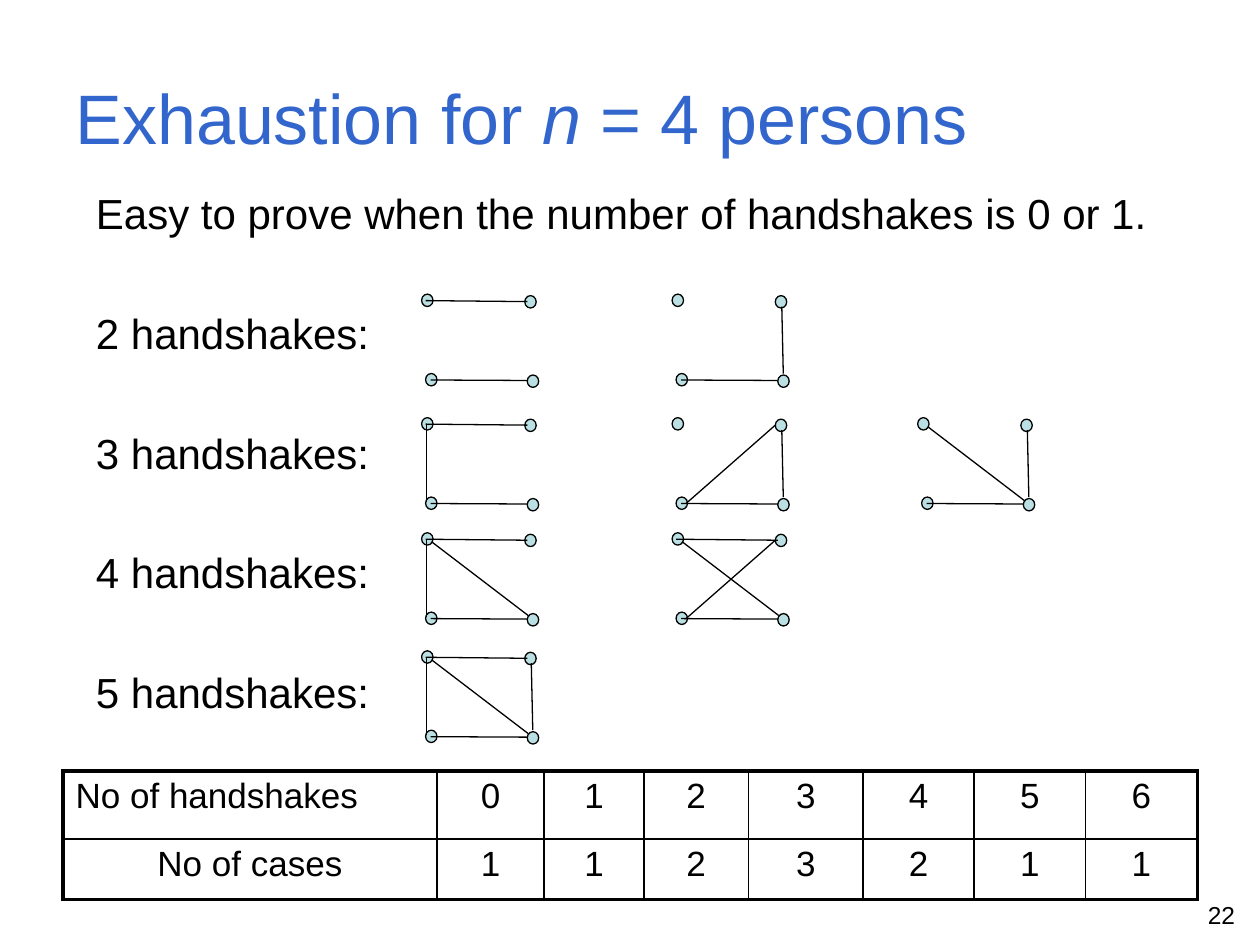
from dataclasses import dataclass

from lxml import etree
from pptx import Presentation
from pptx.dml.color import RGBColor
from pptx.enum.shapes import MSO_CONNECTOR, MSO_SHAPE
from pptx.enum.text import MSO_ANCHOR, MSO_AUTO_SIZE, PP_ALIGN
from pptx.oxml.ns import qn
from pptx.util import Cm, Pt

LEFT, CENTER, RIGHT = PP_ALIGN.LEFT, PP_ALIGN.CENTER, PP_ALIGN.RIGHT
TOP, MIDDLE = MSO_ANCHOR.TOP, MSO_ANCHOR.MIDDLE
NO_AUTOFIT = MSO_AUTO_SIZE.NONE
STRAIGHT = MSO_CONNECTOR.STRAIGHT
ELLIPSE = MSO_SHAPE.OVAL


@dataclass(frozen=True)
class Theme:
    font: str = "Arial"
    heading: str = "3366CC"
    ink: str = "000000"
    person: str = "BBE0E3"
    title_size: float = 40
    body_size: float = 24
    table_size: float = 20
    number_size: float = 14
    thin: float = 0.75
    inner: float = 1
    outer: float = 2.25


PERSON_SIZE = (0.23, 0.25)
PERSONS = [(0, 0), (0.08, 1.6), (2.13, 1.63), (2.08, 0.03)]
HANDSHAKES = {
    "top": ((0.08, 0.13), (2.13, 0.15)),
    "bottom": ((0.18, 1.73), (2.13, 1.74)),
    "left": ((0.1, 0.15), (0.1, 1.7)),
    "right": ((2.21, 0.25), (2.24, 1.6)),
    "rising": ((0.28, 1.73), (2.08, 0.15)),
    "falling": ((0.2, 0.18), (2.15, 1.67)),
}
GRAPH_LEFTS = [8.5, 13.55, 18.5]
GRAPH_ROWS = [
    (5.93, ["top bottom", "bottom right"]),
    (8.42, ["top bottom left", "bottom right rising", "bottom right falling"]),
    (10.74, ["top bottom left falling", "top bottom rising falling"]),
    (13.12, ["top bottom left right falling"]),
]
CASES = [
    ["No of handshakes", "0", "1", "2", "3", "4", "5", "6"],
    ["No of cases", "1", "1", "2", "3", "2", "1", "1"],
]
COLUMN_WIDTHS = [7.54, 2.16, 2.01, 2.11, 2.31, 2.24, 2.24, 2.26]
ROW_HEIGHTS = [1.37, 1.22]


class SlideBuilder:
    def __init__(self, slide, theme):
        self.slide = slide
        self.theme = theme

    def place(self, shape, left, top, width, height):
        shape.left, shape.top = Cm(left), Cm(top)
        shape.width, shape.height = Cm(width), Cm(height)

    def run(self, paragraph, text, size, color=None, italic=False):
        run = paragraph.add_run()
        run.text = text
        run.font.name = self.theme.font
        run.font.size = Pt(size)
        run.font.italic = italic
        run.font.color.rgb = RGBColor.from_string(color or self.theme.ink)

    def title(self, parts, box):
        title = self.slide.shapes.title
        self.place(title, *box)
        frame = title.text_frame
        frame.auto_size = NO_AUTOFIT
        frame.vertical_anchor = MIDDLE
        paragraph = frame.paragraphs[0]
        paragraph.alignment = LEFT
        for text, italic in parts:
            self.run(paragraph, text, self.theme.title_size, self.theme.heading, italic)

    def body(self, lines, box, first_gap, gap):
        body = self.slide.placeholders[1]
        self.place(body, *box)
        frame = body.text_frame
        frame.auto_size = NO_AUTOFIT
        frame.vertical_anchor = TOP
        for index, line in enumerate(lines):
            paragraph = frame.add_paragraph() if index else frame.paragraphs[0]
            paragraph.space_before = Pt(gap if index else first_gap)
            properties = paragraph._p.get_or_add_pPr()
            properties.set("marL", str(Cm(0.95)))
            properties.set("indent", str(Cm(-0.95)))
            etree.SubElement(properties, qn("a:buNone"))
            self.run(paragraph, line, self.theme.body_size)

    def page_number(self, number, box):
        frame = self.slide.shapes.add_textbox(*map(Cm, box)).text_frame
        frame.word_wrap = True
        paragraph = frame.paragraphs[0]
        paragraph.alignment = RIGHT
        self.run(paragraph, number, self.theme.number_size)

    def person(self, group, left, top):
        dot = group.shapes.add_shape(ELLIPSE, *map(Cm, (left, top, *PERSON_SIZE)))
        dot.shadow.inherit = False
        dot.fill.solid()
        dot.fill.fore_color.rgb = RGBColor.from_string(self.theme.person)
        dot.line.color.rgb = RGBColor.from_string(self.theme.ink)
        dot.line.width = Pt(self.theme.thin)

    def handshake(self, group, start, end):
        line = group.shapes.add_connector(STRAIGHT, *map(Cm, (*start, *end)))
        line.line.color.rgb = RGBColor.from_string(self.theme.ink)
        line.line.width = Pt(self.theme.thin)
        etree.SubElement(line._element.spPr, qn("a:effectLst"))

    def graph_row(self, top, graphs):
        group = self.slide.shapes.add_group_shape()
        for left, edges in zip(GRAPH_LEFTS, graphs):
            for x, y in PERSONS:
                self.person(group, left + x, top + y)
            for edge in edges.split():
                start, end = [(left + x, top + y) for x, y in HANDSHAKES[edge]]
                self.handshake(group, start, end)

    def borders(self, cell, outer_sides):
        properties = cell._tc.get_or_add_tcPr()
        for position, side in enumerate("LRTB"):
            width = self.theme.outer if side in outer_sides else self.theme.inner
            line = etree.Element(qn(f"a:ln{side}"), w=str(Pt(width)))
            fill = etree.SubElement(line, qn("a:solidFill"))
            etree.SubElement(fill, qn("a:srgbClr"), val=self.theme.ink)
            properties.insert(position, line)

    def table(self, rows, left, top):
        width, height = sum(COLUMN_WIDTHS), sum(ROW_HEIGHTS)
        last_row, last_column = len(rows) - 1, len(COLUMN_WIDTHS) - 1
        table = self.slide.shapes.add_table(
            len(rows), len(COLUMN_WIDTHS), *map(Cm, (left, top, width, height))
        ).table
        table.first_row = table.horz_banding = False
        for column, column_width in zip(table.columns, COLUMN_WIDTHS):
            column.width = Cm(column_width)
        for r, (texts, row_height) in enumerate(zip(rows, ROW_HEIGHTS)):
            table.rows[r].height = Cm(row_height)
            for c, text in enumerate(texts):
                cell = table.cell(r, c)
                cell.fill.background()
                edges = {"L": c == 0, "R": c == last_column, "T": r == 0, "B": r == last_row}
                self.borders(cell, [side for side, outer in edges.items() if outer])
                paragraph = cell.text_frame.paragraphs[0]
                paragraph.alignment = LEFT if r == c == 0 else CENTER
                paragraph.space_before = Pt(self.theme.table_size * 0.2)
                self.run(paragraph, text, self.theme.table_size)


def main():
    deck = Presentation()
    deck.slide_width, deck.slide_height = Cm(25.4), Cm(19.05)
    builder = SlideBuilder(deck.slides.add_slide(deck.slide_layouts[1]), Theme())
    builder.title(
        [("Exhaustion for ", False), ("n", True), (" = 4 persons", False)],
        (1.27, 0.76, 22.86, 3.18),
    )
    labels = [f"{count} handshakes:" for count in range(2, 6)]
    builder.body(
        ["Easy to prove when the number of handshakes is 0 or 1.", *labels],
        (1.68, 3.66, 22.38, 12.57),
        first_gap=4.8,
        gap=39.6,
    )
    builder.table(CASES, 1.27, 15.54)
    for top, graphs in GRAPH_ROWS:
        builder.graph_row(top, graphs)
    builder.page_number("22", (19.23, 18.01, 5.92, 0.79))
    deck.save("out.pptx")


if __name__ == "__main__":
    main()
